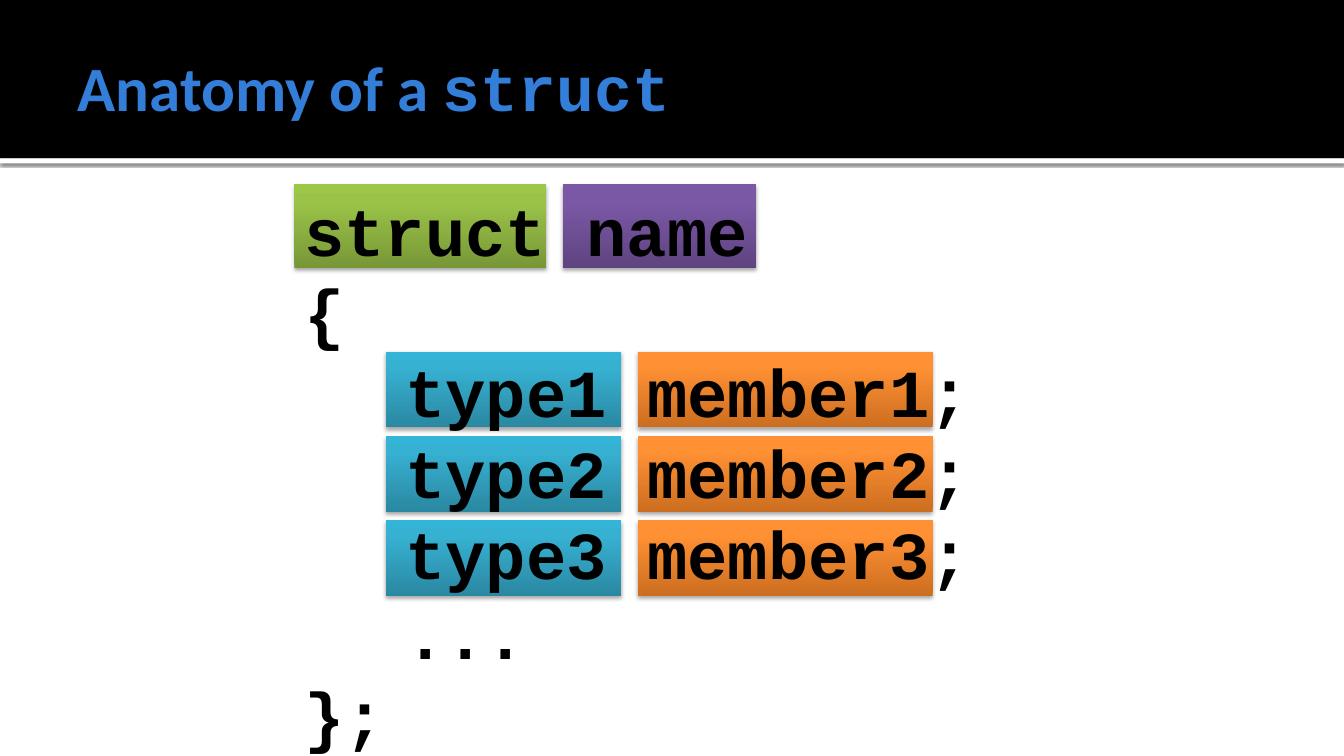
from copy import deepcopy
from typing import NamedTuple

from lxml import etree
from pptx import Presentation
from pptx.dml.color import RGBColor
from pptx.enum.shapes import MSO_SHAPE
from pptx.enum.text import MSO_ANCHOR, PP_ALIGN
from pptx.oxml.ns import qn
from pptx.util import Inches, Pt

RECTANGLE = MSO_SHAPE.RECTANGLE
MIDDLE = MSO_ANCHOR.MIDDLE
LEFT = PP_ALIGN.LEFT
TITLE_ONLY = 5

BLACK = RGBColor(0x00, 0x00, 0x00)
WHITE = RGBColor(0xFF, 0xFF, 0xFF)
TITLE_BLUE = RGBColor(0x33, 0x7E, 0xD9)
# Gradient colours from bottom to top
GREEN = (RGBColor(0x77, 0x97, 0x37), RGBColor(0x9B, 0xC3, 0x48), RGBColor(0x9D, 0xC7, 0x46))
PURPLE = (RGBColor(0x5F, 0x44, 0x80), RGBColor(0x7B, 0x58, 0xA6), RGBColor(0x7C, 0x57, 0xA8))
TEAL = (RGBColor(0x2A, 0x88, 0xA2), RGBColor(0x37, 0xB1, 0xD2), RGBColor(0x34, 0xB4, 0xD6))
ORANGE = (RGBColor(0xCC, 0x6E, 0x20), RGBColor(0xFF, 0x90, 0x34), RGBColor(0xFF, 0x91, 0x36))
STOP_POSITIONS = (0, 0.8, 1)

PROSE = "Calibri"
CODE = "Courier New"
CODE_LINES = (
    "struct name",
    "{",
    "\ttype1 member1;",
    "\ttype2 member2;",
    "\ttype3 member3;",
    "\t...",
    "};",
)
FIRST_MEMBER_TOP = 3.49
MEMBER_PITCH = 0.835


class Shadow(NamedTuple):
    opacity: int
    blur: float
    distance: float


class Block(NamedTuple):
    left: float
    top: float
    width: float
    height: float
    colors: tuple[RGBColor, ...]
    shadow: Shadow | None = None


BAND_SHADOW = Shadow(60, 2.5, 0.8)
TOKEN_SHADOW = Shadow(35, 3.1, 1.8)

BANDS = (
    Block(0, 1.57, 13.33, 0.05, (WHITE,), BAND_SHADOW),
    Block(0, 0, 13.33, 1.57, (BLACK,)),
)
MEMBER_TOPS = [FIRST_MEMBER_TOP + row * MEMBER_PITCH for row in range(3)]
TOKENS = (
    *(Block(6.33, top, 2.92, 0.75, ORANGE, TOKEN_SHADOW) for top in MEMBER_TOPS),
    *(Block(3.83, top, 2.33, 0.75, TEAL, TOKEN_SHADOW) for top in MEMBER_TOPS),
    Block(2.92, 1.83, 2.5, 0.83, GREEN, TOKEN_SHADOW),
    Block(5.58, 1.83, 1.92, 0.83, PURPLE, TOKEN_SHADOW),
)


def fill_block(shape, colors: tuple[RGBColor, ...]) -> None:
    """Fill with one solid colour or a three-stop upward gradient."""
    if len(colors) == 1:
        shape.fill.solid()
        shape.fill.fore_color.rgb = colors[0]
        return
    shape.fill.gradient()
    shape.fill.gradient_angle = 90
    last_stop = shape.element.xpath(".//a:gs")[-1]
    last_stop.addnext(deepcopy(last_stop))
    for stop, position, color in zip(shape.fill.gradient_stops, STOP_POSITIONS, colors):
        stop.position = position
        stop.color.rgb = color


def add_shadow(shape, shadow: Shadow) -> None:
    effects = shape.element.spPr.find(qn("a:effectLst"))
    outer = etree.SubElement(
        effects, qn("a:outerShdw"), blurRad=str(Pt(shadow.blur)),
        dist=str(Pt(shadow.distance)), dir="5400000", rotWithShape="0",
    )
    color = etree.SubElement(outer, qn("a:srgbClr"), val=str(BLACK))
    etree.SubElement(color, qn("a:alpha"), val=str(shadow.opacity * 1000))


def add_block(slide, block: Block) -> None:
    bounds = (Inches(value) for value in block[:4])
    shape = slide.shapes.add_shape(RECTANGLE, *bounds)
    shape.line.fill.background()
    fill_block(shape, block.colors)
    shape.shadow.inherit = False
    if block.shadow:
        add_shadow(shape, block.shadow)


def add_text(paragraph, text: str, *, font: str, size: float, color: RGBColor) -> None:
    run = paragraph.add_run()
    run.text = text
    run.font.name = font
    run.font.size = Pt(size)
    run.font.bold = True
    run.font.color.rgb = color


def add_tab_stop(paragraph, position: float) -> None:
    properties = paragraph._p.get_or_add_pPr()
    stops = etree.SubElement(properties, qn("a:tabLst"))
    etree.SubElement(stops, qn("a:tab"), pos=str(Inches(position)), algn="l")


def add_title(slide) -> None:
    title = slide.shapes.title
    title.left, title.top = Inches(0.67), Inches(0.17)
    title.width, title.height = Inches(12), Inches(1.37)
    frame = title.text_frame
    frame.vertical_anchor = MIDDLE
    frame.margin_left = Inches(0.1)
    frame.margin_top = frame.margin_right = frame.margin_bottom = Inches(0.05)
    heading = frame.paragraphs[0]
    heading.alignment = LEFT
    for text, font in (("Anatomy of a ", PROSE), ("struct", CODE)):
        add_text(heading, text, font=font, size=45, color=TITLE_BLUE)
    # Bring the title in front of the bands
    title.element.getparent().append(title.element)


def add_code(slide) -> None:
    code = slide.shapes.add_textbox(Inches(2.92), Inches(1.83), Inches(7.75), Inches(5.76))
    frame = code.text_frame
    frame.word_wrap = True
    frame.margin_top = Inches(0.05)
    for index, text in enumerate(CODE_LINES):
        line = frame.add_paragraph() if index else frame.paragraphs[0]
        line.line_spacing = Pt(57.6)
        add_tab_stop(line, 1)
        add_text(line, text, font=CODE, size=48, color=BLACK)


def main() -> None:
    deck = Presentation()
    deck.slide_width, deck.slide_height = Inches(13.33), Inches(7.5)
    slide = deck.slides.add_slide(deck.slide_layouts[TITLE_ONLY])
    for band in BANDS:
        add_block(slide, band)
    add_title(slide)
    for token in TOKENS:
        add_block(slide, token)
    add_code(slide)
    deck.save("out.pptx")


if __name__ == "__main__":
    main()
